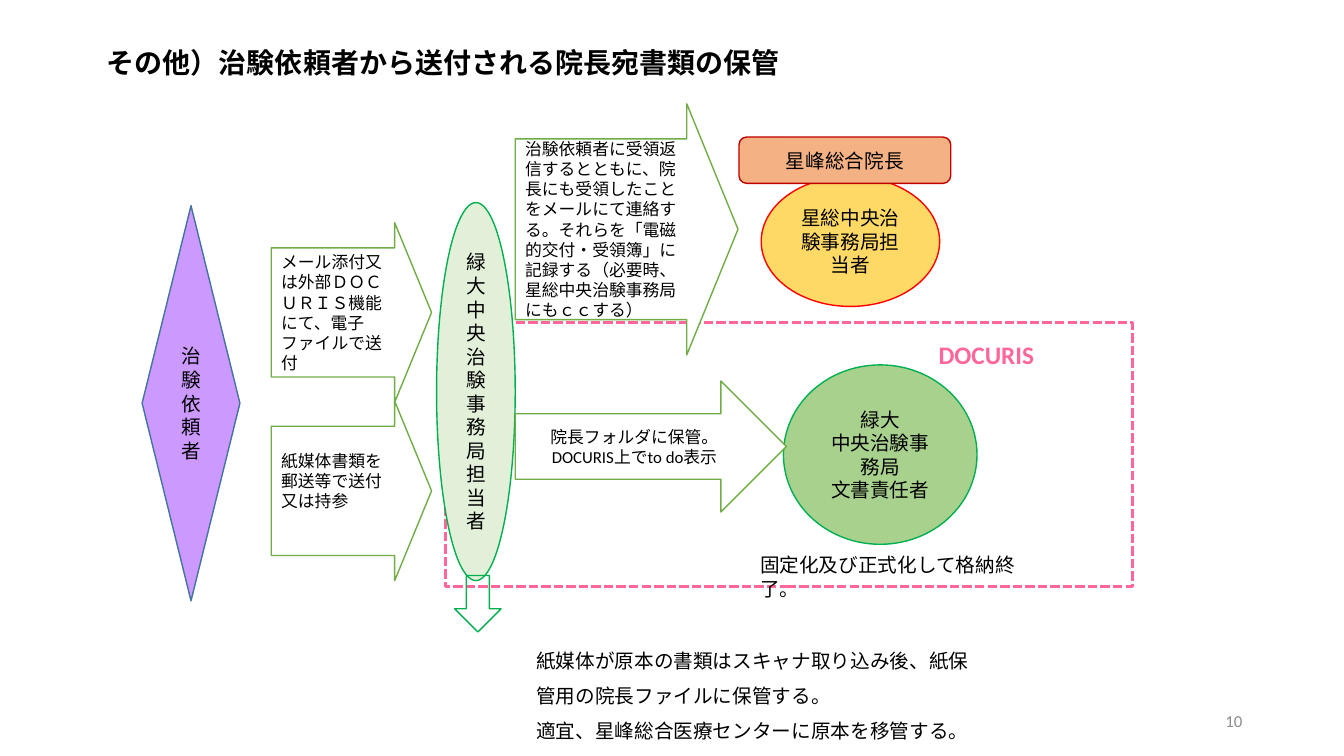
from pptx import Presentation
from pptx.dml.color import RGBColor
from pptx.enum.dml import MSO_LINE
from pptx.enum.shapes import MSO_SHAPE
from pptx.enum.text import MSO_ANCHOR, MSO_AUTO_SIZE, PP_ALIGN
from pptx.util import Emu, Pt

EMU_PER_PX = 9144
COLORS = {
    "black": "000000", "white": "FFFFFF", "gray": "8C8C8C",
    "pink": "FF6699", "purple": "CC99FF", "blue": "43739E",
    "pale_green": "E2F0D9", "soft_green": "A9D18E", "green": "00B050",
    "arrow_green": "70AD47", "yellow": "FFD966", "red": "FF0000",
    "orange": "F4B183", "dark_red": "C00000",
}


def px(value):
    return Emu(value * EMU_PER_PX)


def color(name):
    return RGBColor.from_string(COLORS[name])


class SlideBuilder:
    font = "Calibri"

    def __init__(self, slide):
        self.slide = slide

    def fill_text(self, frame, paragraphs, size, ink="black", bold=False,
                  align=PP_ALIGN.LEFT, spacing=None):
        for index, text in enumerate(paragraphs):
            paragraph = frame.add_paragraph() if index else frame.paragraphs[0]
            paragraph.alignment = align
            if spacing:
                paragraph.line_spacing = spacing
            run = paragraph.add_run()
            run.text = text
            run.font.name = self.font
            run.font.size = Pt(size)
            run.font.bold = bold
            run.font.color.rgb = color(ink)

    def shape(self, kind, box, line, fill=None, paragraphs=(), size=14,
              align=PP_ALIGN.CENTER, width=1):
        shape = self.slide.shapes.add_shape(kind, *map(px, box))
        shape.shadow.inherit = False
        if fill:
            shape.fill.solid()
            shape.fill.fore_color.rgb = color(fill)
        else:
            shape.fill.background()
        shape.line.color.rgb = color(line)
        shape.line.width = Pt(width)
        frame = shape.text_frame
        frame.word_wrap = True
        frame.vertical_anchor = MSO_ANCHOR.MIDDLE
        self.fill_text(frame, paragraphs, size, align=align)
        return shape

    def arrow(self, box, text):
        shape = self.shape(MSO_SHAPE.RIGHT_ARROW, box, "arrow_green", "white",
                           [text], 12, PP_ALIGN.LEFT)
        shape.adjustments[0] = 0.72
        shape.adjustments[1] = 0.23
        return shape

    def text(self, box, paragraphs, size=14, wrap=True,
             anchor=MSO_ANCHOR.TOP, **style):
        frame = self.slide.shapes.add_textbox(*map(px, box)).text_frame
        frame.word_wrap = wrap
        frame.auto_size = MSO_AUTO_SIZE.SHAPE_TO_FIT_TEXT
        frame.vertical_anchor = anchor
        self.fill_text(frame, paragraphs, size, **style)


def main():
    presentation = Presentation()
    presentation.slide_width = px(1333)
    presentation.slide_height = px(750)
    builder = SlideBuilder(presentation.slides.add_slide(presentation.slide_layouts[6]))

    system_frame = builder.shape(MSO_SHAPE.RECTANGLE, (442, 320, 681, 262), "pink", width=2.25)
    system_frame.line.dash_style = MSO_LINE.SQUARE_DOT
    builder.text((96, 40, 802, 44), ["その他）治験依頼者から送付される院長宛書類の保管"], 20, bold=True)

    builder.shape(MSO_SHAPE.OVAL, (433, 201, 78, 375), "green", "pale_green",
                  ["緑大", "中央治験事務局担当者"])
    builder.shape(MSO_SHAPE.OVAL, (755, 175, 177, 129), "red", "yellow",
                  ["星総中央治験事務局担当者"])
    builder.shape(MSO_SHAPE.OVAL, (777, 362, 192, 178), "green", "soft_green",
                  ["緑大", "中央治験事務局", "文書責任者"])
    builder.text((744, 544, 289, 34), ["固定化及び正式化して格納終了。"])
    builder.shape(MSO_SHAPE.RIGHT_ARROW, (511, 378, 269, 130), "arrow_green", "white",
                  ["院長フォルダに保管。DOCURIS上でto do表示"], 12)
    builder.text((921, 332, 115, 40), ["DOCURIS"], 18, wrap=False, ink="pink", bold=True)
    builder.shape(MSO_SHAPE.DIAMOND, (141, 204, 97, 392), "blue", "purple", ["治験依頼者"])

    builder.arrow((269, 221, 159, 178),
                  "メール添付又は外部ＤＯＣＵＲＩＳ機能にて、電子ファイルで送付")
    builder.arrow((511, 103, 221, 249),
                  "治験依頼者に受領返信するとともに、院長にも受領したことをメールにて連絡する。"
                  "それらを「電磁的交付・受領簿」に記録する（必要時、星総中央治験事務局にもｃｃする）")
    builder.shape(MSO_SHAPE.ROUNDED_RECTANGLE, (733, 136, 210, 46), "dark_red", "orange",
                  ["星峰総合院長"])
    paper_arrow = builder.arrow((269, 398, 159, 178), "紙媒体書類を郵送等で送付又は持参")
    paper_arrow.text_frame.margin_bottom = px(25)

    builder.text((522, 627, 460, 116),
                 ["紙媒体が原本の書類はスキャナ取り込み後、紙保管用の院長ファイルに保管する。",
                  "適宜、星峰総合医療センターに原本を移管する。"], spacing=1.5)
    builder.shape(MSO_SHAPE.DOWN_ARROW, (451, 571, 46, 56), "green")
    builder.text((942, 695, 300, 40), ["10"], 12, anchor=MSO_ANCHOR.MIDDLE,
                 ink="gray", align=PP_ALIGN.RIGHT)

    presentation.save("out.pptx")


if __name__ == "__main__":
    main()
